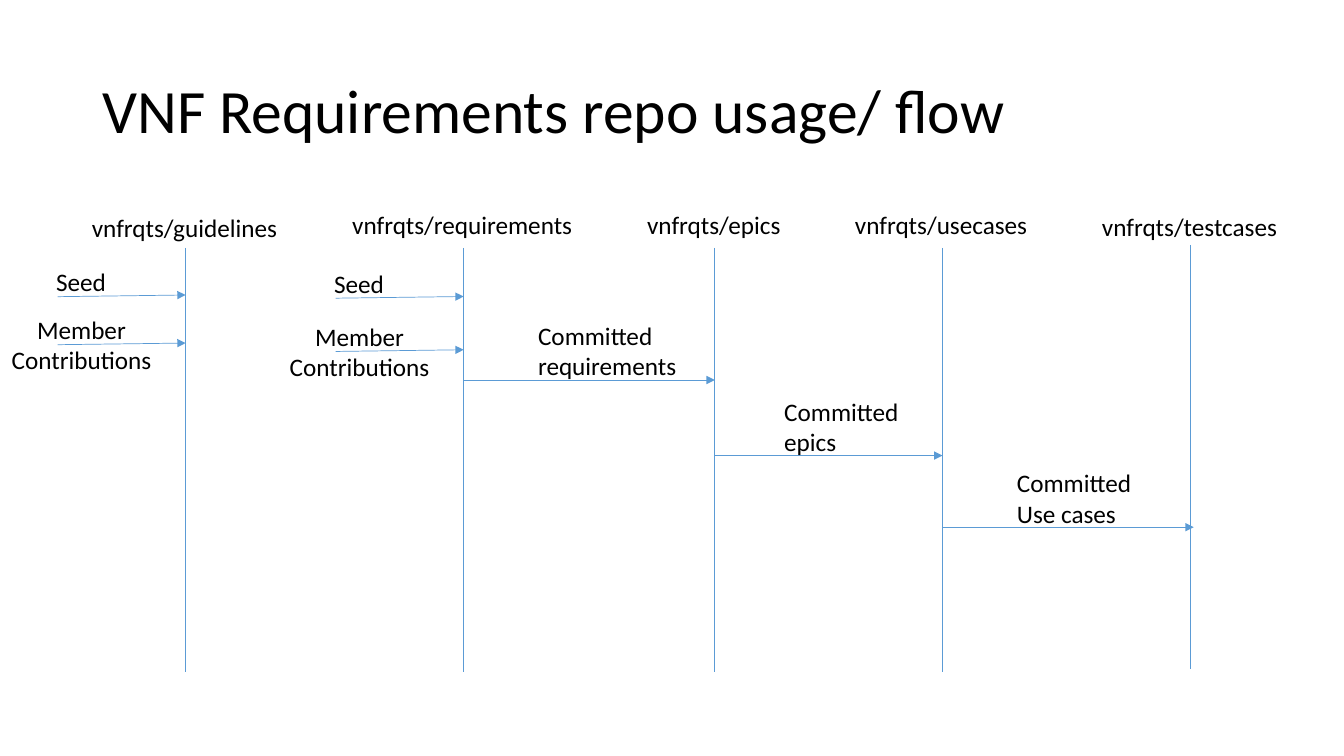
from dataclasses import dataclass

from lxml import etree
from pptx import Presentation
from pptx import util as u
from pptx.dml.color import RGBColor
from pptx.enum import shapes, text
from pptx.oxml.ns import qn

COLUMNS, ROWS = 160, 90
SLIDE_WIDTH, SLIDE_HEIGHT = u.Inches(13.33), u.Inches(7.5)


@dataclass(frozen=True)
class Theme:
    """Colours and type sizes of the slide."""
    font: str = "Calibri"
    ink: str = "000000"
    line: str = "5B9BD5"
    title_size: int = 44
    label_size: int = 18
    line_width: float = 0.5


@dataclass(frozen=True)
class Box:
    """A region measured in grid columns and rows."""
    left: float
    top: float
    width: float
    height: float

    def within(self, left, top, width, height):
        """Return a box whose corner is relative to this one."""
        return Box(self.left + left, self.top + top, width, height)


@dataclass(frozen=True)
class Repository:
    """A lifeline with its heading and the contributions it receives."""
    name: str
    axis: float
    heading_width: float
    heading_drop: float = 0
    line_drop: float = 0
    contribution_rows: tuple = ()


@dataclass(frozen=True)
class Handoff:
    """A committed artefact passed to the next repository."""
    label: str
    row: float
    indent: float
    width: float
    overshoot: float = 0


THEME = Theme()
LABEL_HEIGHT = 4.85
TWO_LINE_HEIGHT = 8.5
REPOSITORIES = (
    Repository("vnfrqts/guidelines", 22.1, 24.7, heading_drop=0.36,
               contribution_rows=(10.76, 16.48)),
    Repository("vnfrqts/requirements", 55.2, 28.9,
               contribution_rows=(10.94, 17.28)),
    Repository("vnfrqts/epics", 85.1, 18.5),
    Repository("vnfrqts/usecases", 112.2, 23.2),
    Repository("vnfrqts/testcases", 141.75, 23.5, heading_drop=0.24, line_drop=-0.36),
)
CONTRIBUTIONS = (
    ("Seed", 16.6, 8.4, LABEL_HEIGHT, text.PP_ALIGN.LEFT),
    ("Member\nContributions", 22, 19.2, TWO_LINE_HEIGHT, text.PP_ALIGN.CENTER),
)
HANDOFFS = (
    Handoff("Committed\nrequirements", 20.88, 7.68, 19.1),
    Handoff("Committed\nepics", 29.88, 7.08, 16.2),
    Handoff("Committed\nUse cases", 38.4, 7.68, 16.2, overshoot=0.36),
)


def across(columns):
    """Convert grid columns to a slide length."""
    return round(SLIDE_WIDTH * columns / COLUMNS)


def down(rows):
    """Convert grid rows to a slide length."""
    return round(SLIDE_HEIGHT * rows / ROWS)


def add_text(slide, box, content, size=THEME.label_size, wrap=False,
             align=text.PP_ALIGN.LEFT, anchor=text.MSO_ANCHOR.TOP, spacing=1.0):
    """Add a text box with one paragraph for each line of content."""
    shape = slide.shapes.add_textbox(across(box.left), down(box.top),
                                     across(box.width), down(box.height))
    frame = shape.text_frame
    frame.word_wrap = wrap
    frame.vertical_anchor = anchor
    frame.text = content
    for paragraph in frame.paragraphs:
        paragraph.alignment = align
        paragraph.line_spacing = spacing
        font = paragraph.runs[0].font
        font.name = THEME.font
        font.size = u.Pt(size)
        font.color.rgb = RGBColor.from_string(THEME.ink)


def add_line(slide, start, end, arrow=False):
    """Add a thin straight line, with an arrowhead at its end if asked."""
    connector = slide.shapes.add_connector(
        shapes.MSO_CONNECTOR.STRAIGHT,
        across(start[0]), down(start[1]), across(end[0]), down(end[1]))
    connector.line.color.rgb = RGBColor.from_string(THEME.line)
    connector.line.width = u.Pt(THEME.line_width)
    if arrow:
        etree.SubElement(connector.line._get_or_add_ln(), qn("a:tailEnd"), type="triangle")
    etree.SubElement(connector._element.spPr, qn("a:effectLst"))


def draw_title(slide, box):
    """Fill the box with the slide title."""
    add_text(slide, box, "VNF Requirements repo usage/ flow", size=THEME.title_size,
             wrap=True, anchor=text.MSO_ANCHOR.MIDDLE, spacing=0.9)


def draw_repository(slide, box, repository):
    """Draw a heading centred over its lifeline."""
    add_text(slide, box.within(repository.axis - repository.heading_width / 2,
                               repository.heading_drop,
                               repository.heading_width, LABEL_HEIGHT), repository.name)
    axis = box.left + repository.axis
    top = box.top + 5.16 + repository.line_drop
    add_line(slide, (axis, top), (axis, top + 50.52))


def draw_contributions(slide, box, repository):
    """Draw the labelled arrows that enter a lifeline from its left."""
    axis = box.left + repository.axis
    for row, contribution in zip(repository.contribution_rows, CONTRIBUTIONS):
        label, reach, width, height, align = contribution
        end = box.top + row
        add_line(slide, (axis - 15.24, end + 0.2), (axis, end), arrow=True)
        add_text(slide, box.within(repository.axis - reach, row - 4, width, height),
                 label, align=align)


def draw_handoff(slide, box, handoff, source, target):
    """Draw a labelled arrow from one lifeline to the next."""
    row = box.top + handoff.row
    add_line(slide, (box.left + source.axis, row),
             (box.left + target.axis + handoff.overshoot, row), arrow=True)
    add_text(slide, box.within(source.axis + handoff.indent, handoff.row - 7.68,
                               handoff.width, TWO_LINE_HEIGHT), handoff.label)


def draw_flow(slide, box):
    """Draw the sequence diagram of all repositories."""
    for repository in REPOSITORIES:
        draw_repository(slide, box, repository)
    for repository in REPOSITORIES:
        draw_contributions(slide, box, repository)
    for handoff, source, target in zip(HANDOFFS, REPOSITORIES[1:], REPOSITORIES[2:]):
        draw_handoff(slide, box, handoff, source, target)


def main():
    """Build and save the slide."""
    presentation = Presentation()
    presentation.slide_width, presentation.slide_height = SLIDE_WIDTH, SLIDE_HEIGHT
    slide = presentation.slides.add_slide(presentation.slide_layouts[6])
    draw_title(slide, Box(11, 4.8, 138, 17.4))
    draw_flow(slide, Box(0, 24.36, COLUMNS, 56))
    presentation.save("out.pptx")


if __name__ == "__main__":
    main()
